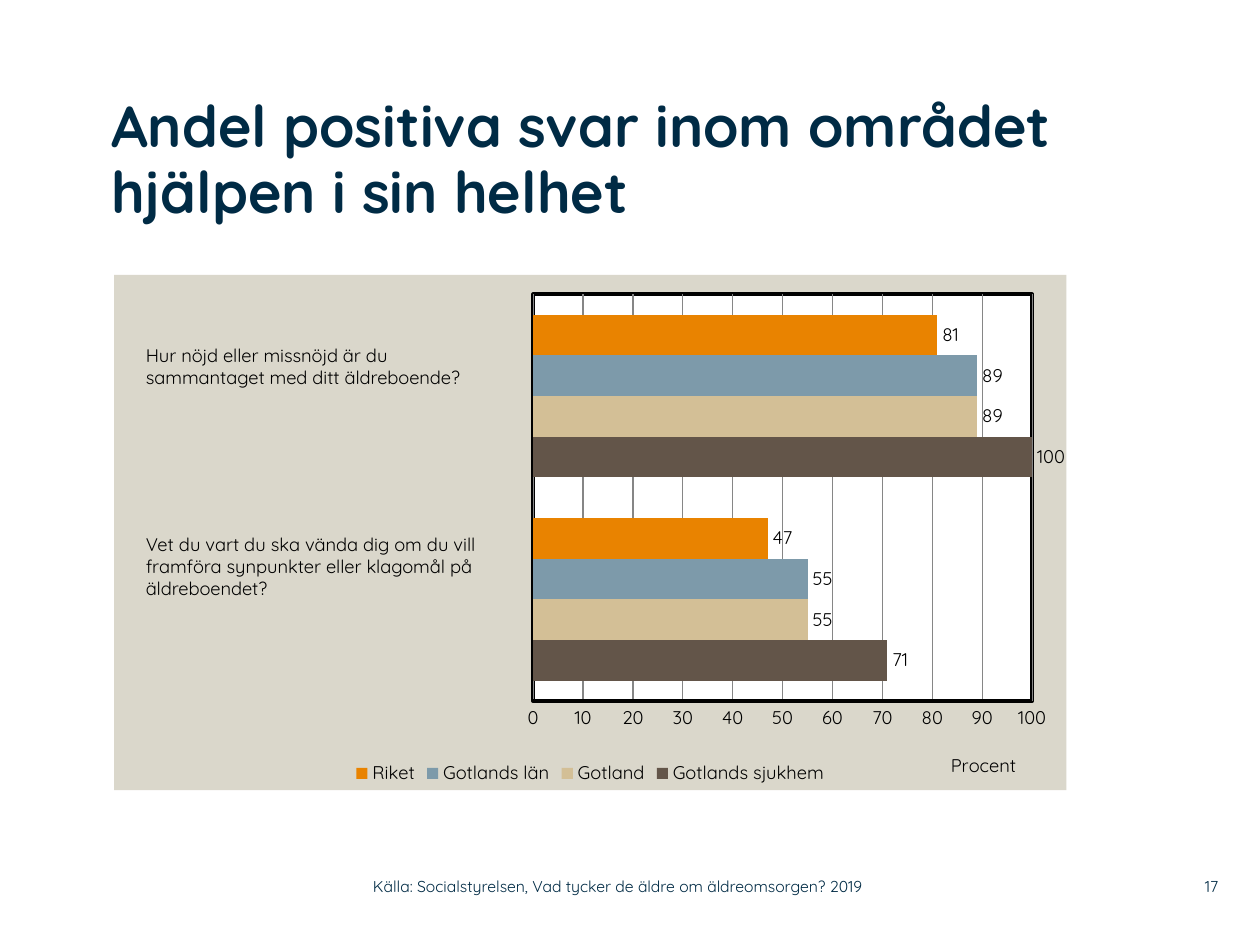
from dataclasses import dataclass

import lxml.etree
import pptx
import pptx.chart.data
import pptx.dml.color
import pptx.enum.chart
import pptx.enum.text
import pptx.oxml
import pptx.util
from pptx.util import Cm, Pt

FONT = "Quicksand"
NAVY, BLACK, WHITE = "002B45", "000000", "FFFFFF"
BEIGE, GREY = "DAD7CB", "868686"
TOP = pptx.enum.text.MSO_ANCHOR.TOP
MIDDLE = pptx.enum.text.MSO_ANCHOR.MIDDLE
LEFT = pptx.enum.text.PP_ALIGN.LEFT
RIGHT = pptx.enum.text.PP_ALIGN.RIGHT


@dataclass
class Label:
    text: str
    left: float
    top: float
    width: float
    height: float
    size: float
    color: str = BLACK
    bold: bool = False
    inset: bool = False
    anchor: object = TOP
    align: object = LEFT
    spacing: float = 1.0


@dataclass
class Series:
    name: str
    values: tuple
    color: str


LABELS = [
    Label("Andel positiva svar inom området hjälpen i sin helhet",
          2.24, 1.91, 19.3, 3.61, 33, NAVY, bold=True, spacing=0.95),
    Label("Hur nöjd eller missnöjd är du\nsammantaget med ditt äldreboende?",
          2.69, 6.81, 7.57, 1.14, 10.5, inset=True),
    Label("Vet du vart du ska vända dig om du vill framföra synpunkter "
          "eller klagomål på äldreboendet?",
          2.69, 10.62, 7.54, 1.6, 10.5, inset=True),
    Label("17", 23.37, 17.5, 1.19, 0.74, 9, NAVY, anchor=MIDDLE, align=RIGHT),
    Label("Källa: Socialstyrelsen, Vad tycker de äldre om äldreomsorgen? 2019",
          7.52, 17.5, 11.25, 0.74, 9, NAVY, anchor=MIDDLE),
]

SERIES = [
    Series("Gotlands sjukhem", (71, 100), "635549"),
    Series("Gotland", (55, 89), "D3BF96"),
    Series("Gotlands län", (55, 89), "7D9AAA"),
    Series("Riket", (47, 81), "E98300"),
]


def rgb(color: str) -> pptx.dml.color.RGBColor:
    return pptx.dml.color.RGBColor.from_string(color)


def style_font(font, size: float, color: str = BLACK, bold: bool = False) -> None:
    font.name, font.size, font.bold = FONT, Pt(size), bold
    font.color.rgb = rgb(color)


def add_label(s, label: Label) -> None:
    sp = s.shapes.add_textbox(Cm(label.left), Cm(label.top),
                              Cm(label.width), Cm(label.height))
    tf = sp.text_frame
    tf.word_wrap = True
    tf.vertical_anchor = label.anchor
    if not label.inset:
        tf.margin_left = tf.margin_right = tf.margin_top = tf.margin_bottom = 0
    tf.text = label.text
    for p in tf.paragraphs:
        p.alignment = label.align
        p.line_spacing = label.spacing
        for r in p.runs:
            style_font(r.font, label.size, label.color, label.bold)


def make_layout(**settings):
    """Return a c:layout element with the given manual settings."""
    ns = pptx.oxml.ns.nsdecls("c")
    items = "".join(f'<c:{k} val="{v}"/>' for k, v in settings.items())
    return pptx.oxml.parse_xml(
        f"<c:layout {ns}><c:manualLayout>{items}</c:manualLayout></c:layout>")


def make_area(fill: str, line: str = ""):
    """Return a c:spPr element for a chart or plot background."""
    ns = pptx.oxml.ns.nsdecls("c", "a")
    solid = '<a:solidFill><a:srgbClr val="{}"/></a:solidFill>'
    border = (f'<a:ln w="{Pt(2.25)}">{solid.format(line)}</a:ln>' if line
              else "<a:ln><a:noFill/></a:ln>")
    return pptx.oxml.parse_xml(f"<c:spPr {ns}>{solid.format(fill)}{border}</c:spPr>")


def add_bar_chart(s) -> None:
    data = pptx.chart.data.CategoryChartData()
    data.categories = ["1", "2"]
    for series in SERIES:
        data.add_series(series.name, series.values)
    chart = s.shapes.add_chart(
        pptx.enum.chart.XL_CHART_TYPE.BAR_CLUSTERED,
        Cm(2.3), Cm(5.54), Cm(19.2), Cm(10.39), data).chart
    style_font(chart.font, 10.5)
    chart.has_title = False

    # Legend
    chart.has_legend = True
    chart.legend.position = pptx.enum.chart.XL_LEGEND_POSITION.BOTTOM
    chart.legend.include_in_layout = False
    style_font(chart.legend.font, 10.5)

    # Axes
    chart.category_axis.visible = False
    axis = chart.value_axis
    axis.minimum_scale, axis.maximum_scale, axis.major_unit = 0, 100, 10
    axis.major_tick_mark = pptx.enum.chart.XL_TICK_MARK.NONE
    axis.format.line.color.rgb = rgb(BLACK)
    axis.format.line.width = Pt(2)
    axis.major_gridlines.format.line.color.rgb = rgb(GREY)
    axis.major_gridlines.format.line.width = Pt(0.75)
    style_font(axis.tick_labels.font, 10.5)
    title = axis.axis_title
    title.text_frame.text = "Procent"
    style_font(title.text_frame.paragraphs[0].runs[0].font, 10.5)

    # Bars and value labels
    plot = chart.plots[0]
    plot.gap_width, plot.overlap = 100, 0
    plot.vary_by_categories = False
    for bar, series in zip(plot.series, SERIES):
        bar.format.fill.solid()
        bar.format.fill.fore_color.rgb = rgb(series.color)
        labels = bar.data_labels
        labels.show_value = True
        labels.position = pptx.enum.chart.XL_LABEL_POSITION.OUTSIDE_END
        style_font(labels.font, 10.5)

    # Manual placement and backgrounds
    space = chart.element
    area = space.find(".//" + pptx.oxml.ns.qn("c:plotArea"))
    for parent, layout in (
        (area, make_layout(layoutTarget="inner", xMode="edge", yMode="edge",
                           x=0.44, y=0.038, w=0.524, h=0.789)),
        (title.element, make_layout(xMode="edge", yMode="edge", x=0.875, y=0.92)),
    ):
        for old in parent.findall(pptx.oxml.ns.qn("c:layout")):
            parent.remove(old)
        parent.insert(0 if parent is area else 1, layout)
    area.append(make_area(WHITE, BLACK))
    space.find(pptx.oxml.ns.qn("c:chart")).addnext(make_area(BEIGE))


def main() -> None:
    prs = pptx.Presentation()
    prs.slide_width, prs.slide_height = Cm(25.4), Cm(19.05)
    s = prs.slides.add_slide(prs.slide_layouts[6])
    add_bar_chart(s)
    for label in LABELS:
        add_label(s, label)
    prs.save("out.pptx")


if __name__ == "__main__":
    main()
